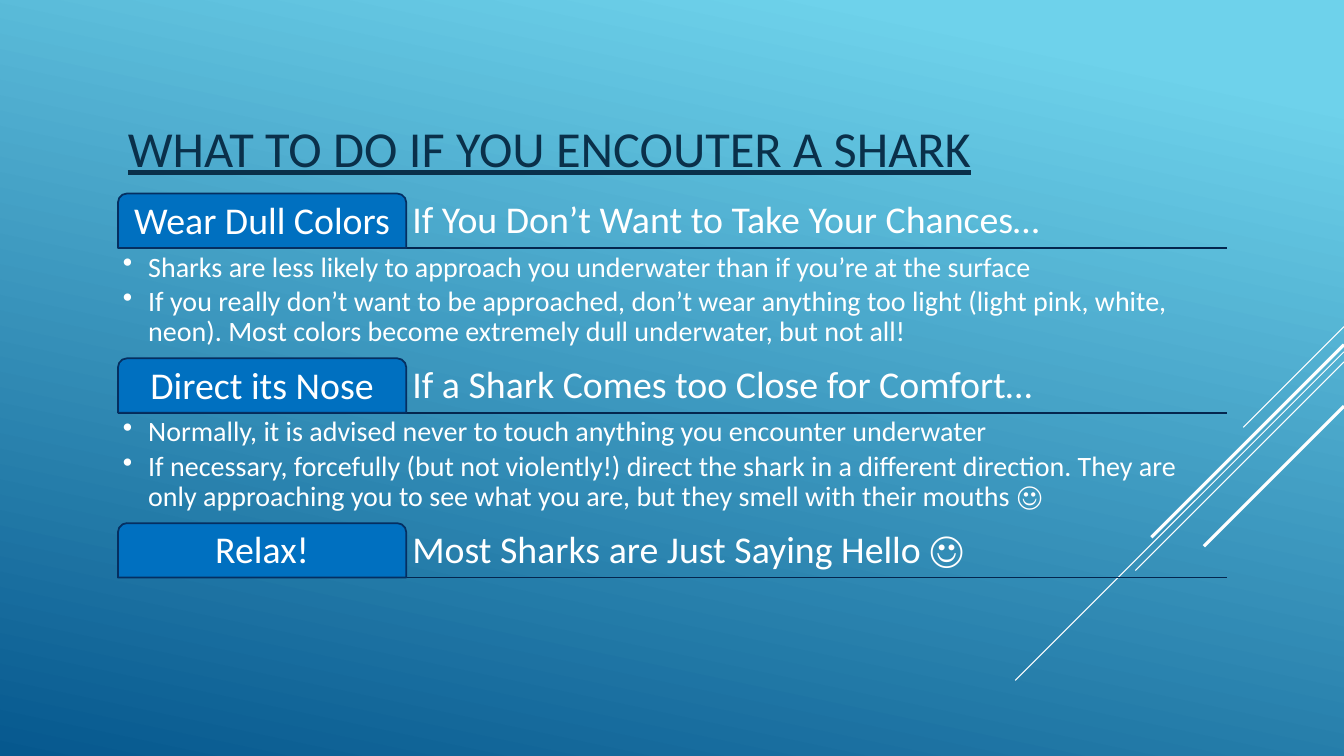
from lxml import etree
from pptx import Presentation
from pptx.dml.color import RGBColor
from pptx.enum.shapes import MSO_CONNECTOR, MSO_SHAPE
from pptx.enum.text import MSO_ANCHOR, PP_ALIGN
from pptx.oxml.ns import qn
from pptx.util import Inches, Pt

STRAIGHT = MSO_CONNECTOR.STRAIGHT
TAB_SHAPE = MSO_SHAPE.ROUND_2_SAME_RECTANGLE
TOP, MIDDLE, BOTTOM = MSO_ANCHOR.TOP, MSO_ANCHOR.MIDDLE, MSO_ANCHOR.BOTTOM
LEFT, CENTER = PP_ALIGN.LEFT, PP_ALIGN.CENTER

COLORS = {
    "sky": "6ED2EB", "deep": "06588E", "title": "0A304A", "white": "FFFFFF",
    "rule": "04264E", "tab": "0070C0", "tab_line": "052F61",
}
FONT = "Calibri"
WIDTH, HEIGHT = 13.33, 7.5
MARGIN = 1.17
CONTENT_WIDTH = 11
TAB_SHARE = 0.26
HEADER_HEIGHT = 0.54
SECTION_TOP, SECTION_PITCH = 1.92, 1.635
BULLETS_HEIGHT = 1.07

# Start height on the right edge, diagonal run, line width
STREAKS = [(3.24, 1, 0.75), (3.49, 3.26, 0.75), (3.59, 2.07, 0.75),
           (3.42, 1.91, 2.25), (4.03, 1.39, 2.25)]

SECTIONS = [
    ("Wear Dull Colors", "If You Don’t Want to Take Your Chances…", [
        "Sharks are less likely to approach you underwater than if you’re at the surface",
        "If you really don’t want to be approached, don’t wear anything too light "
        "(light pink, white, neon). Most colors become extremely dull underwater, but not all!",
    ]),
    ("Direct its Nose", "If a Shark Comes too Close for Comfort…", [
        "Normally, it is advised never to touch anything you encounter underwater",
        "If necessary, forcefully (but not violently!) direct the shark in a different "
        "direction. They are only approaching you to see what you are, but they smell "
        "with their mouths ☺",
    ]),
    ("Relax!", "Most Sharks are Just Saying Hello ☺", []),
]


def color(name):
    return RGBColor.from_string(COLORS[name])


def add_line(slide, start, end, color_name, width):
    line = slide.shapes.add_connector(STRAIGHT, *map(Inches, start + end))
    line.line.color.rgb = color(color_name)
    line.line.width = Pt(width)
    etree.SubElement(line._element.spPr, qn("a:effectLst"))


def add_bullet(paragraph):
    properties = paragraph._p.get_or_add_pPr()
    properties.set("marL", str(Inches(0.25)))
    properties.set("indent", str(-Inches(0.25)))
    etree.SubElement(properties, qn("a:buChar")).set("char", "•")


def write(shape, lines, size, color_name="white", anchor=TOP, align=LEFT,
          inset=0.06, spacing=0.9, bullets=False):
    frame = shape.text_frame
    frame.word_wrap = True
    frame.vertical_anchor = anchor
    frame.margin_left = frame.margin_right = Inches(inset)
    frame.margin_top = frame.margin_bottom = Inches(inset)
    frame.text = "\n".join(lines)
    for paragraph in frame.paragraphs:
        paragraph.alignment = align
        paragraph.line_spacing = spacing
        if bullets:
            paragraph.space_after = Pt(3)
            add_bullet(paragraph)
        for run in paragraph.runs:
            run.font.name = FONT
            run.font.size = Pt(size)
            run.font.color.rgb = color(color_name)


def add_text(slide, box, lines, size, **style):
    shape = slide.shapes.add_textbox(*map(Inches, box))
    write(shape, lines, size, **style)
    return shape


def add_background(slide):
    fill = slide.background.fill
    fill.gradient()
    fill.gradient_angle = 360 - 102
    for stop, position, name in zip(fill.gradient_stops, (0.1, 1), ("sky", "deep")):
        stop.position = position
        stop.color.rgb = color(name)


def add_streaks(slide):
    for top, run, width in STREAKS:
        add_line(slide, (WIDTH, top), (WIDTH - run, top + run), "white", width)


def add_title(slide, box):
    title = add_text(slide, box, ["WHAT TO DO IF YOU ENCOUTER A SHARK"], 36,
                     color_name="title", anchor=MIDDLE, inset=0.1, spacing=0.9)
    title.text_frame.paragraphs[0].runs[0].font.underline = True


def add_section(slide, box, label, heading, bullets):
    """Place a tab and heading on a rule, with the bullets beneath it."""
    left, top, width, header_height = box
    tab_width = width * TAB_SHARE
    rule = top + header_height
    add_line(slide, (left, rule), (left + width, rule), "rule", 1.25)
    add_text(slide, (left + tab_width, top, width - tab_width, header_height),
             [heading], 27, anchor=BOTTOM)
    tab = slide.shapes.add_shape(
        TAB_SHAPE, *map(Inches, (left, top, tab_width, header_height)))
    tab.shadow.inherit = False
    tab.fill.solid()
    tab.fill.fore_color.rgb = color("tab")
    tab.line.color.rgb = color("tab_line")
    tab.line.width = Pt(1.25)
    write(tab, [label], 27, anchor=MIDDLE, align=CENTER)
    if bullets:
        add_text(slide, (left, rule, width, BULLETS_HEIGHT), bullets, 20,
                 inset=0.05, bullets=True)


def main():
    presentation = Presentation()
    presentation.slide_width = Inches(WIDTH)
    presentation.slide_height = Inches(HEIGHT)
    slide = presentation.slides.add_slide(presentation.slide_layouts[6])
    add_background(slide)
    add_streaks(slide)
    add_title(slide, (MARGIN, HEIGHT * 0.1, CONTENT_WIDTH, HEIGHT * 0.2))
    for index, section in enumerate(SECTIONS):
        top = SECTION_TOP + index * SECTION_PITCH
        add_section(slide, (MARGIN, top, CONTENT_WIDTH, HEADER_HEIGHT), *section)
    presentation.save("out.pptx")


if __name__ == "__main__":
    main()
